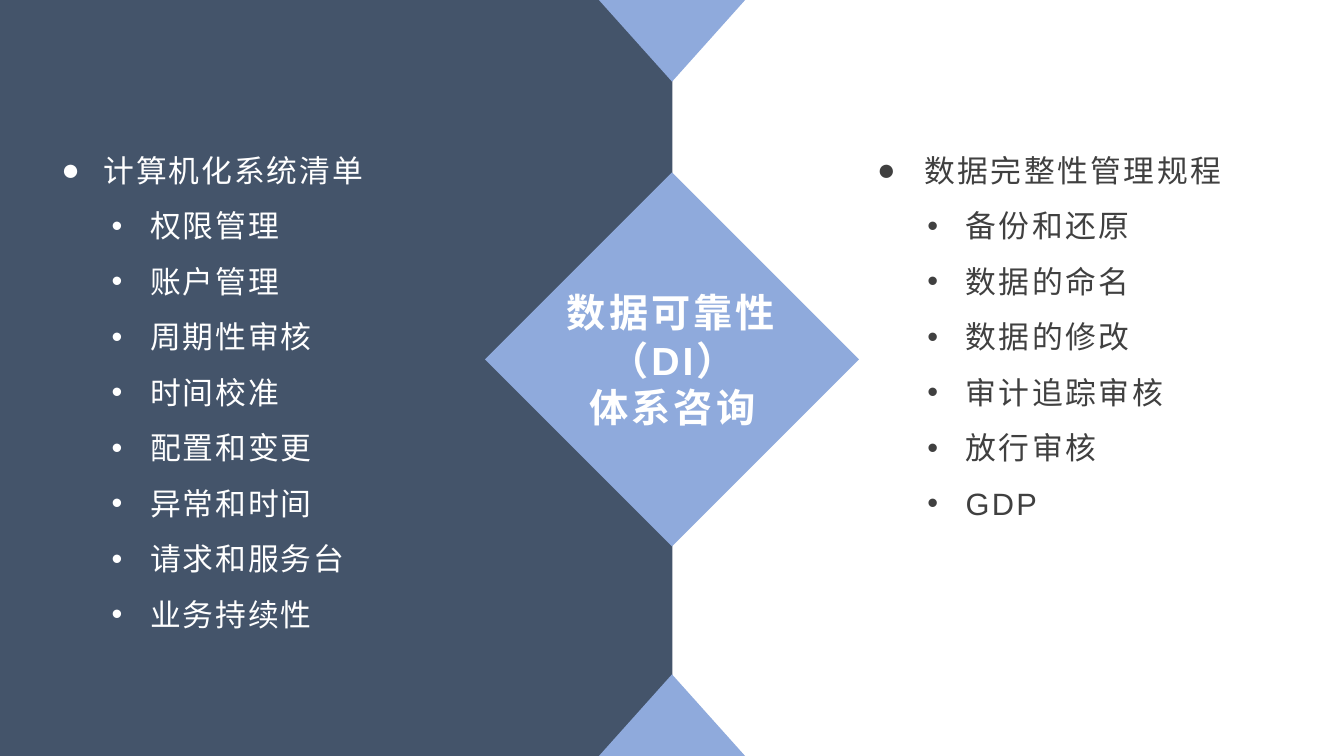
from dataclasses import dataclass

from lxml.etree import SubElement
from pptx import Presentation
from pptx.dml.color import RGBColor
from pptx.enum.shapes import MSO_SHAPE
from pptx.enum.text import MSO_ANCHOR, PP_ALIGN
from pptx.oxml.ns import qn
from pptx.slide import Slide
from pptx.text.text import TextFrame, _Paragraph
from pptx.util import Inches, Pt


@dataclass(frozen=True)
class Theme:
    font: str = "Arial"
    navy: str = "44546A"
    sky: str = "8FAADC"
    white: str = "FFFFFF"
    charcoal: str = "404040"
    title_size: int = 28
    list_size: int = 22
    title_tracking: float = 2.2
    latin_tracking: float = 1.6


@dataclass(frozen=True)
class Panel:
    shape: MSO_SHAPE
    left: float
    top: float
    width: float
    height: float
    color: str
    rotation: int = 0


@dataclass(frozen=True)
class Topic:
    left: float
    heading: str
    entries: tuple[str, ...]
    color: str
    tracking: float
    indent: float


THEME = Theme()
PANELS = (
    Panel(MSO_SHAPE.RECTANGLE, 0, 0, 6.67, 7.5, THEME.navy),
    Panel(MSO_SHAPE.ISOSCELES_TRIANGLE, 5.94, 0, 1.45, 0.81, THEME.sky, 180),
    Panel(MSO_SHAPE.DIAMOND, 4.81, 1.71, 3.71, 3.71, THEME.sky),
    Panel(MSO_SHAPE.ISOSCELES_TRIANGLE, 5.94, 6.69, 1.45, 0.81, THEME.sky),
)
TOPICS = (
    Topic(0.51, "计算机化系统清单",
          ("权限管理", "账户管理", "周期性审核", "时间校准", "配置和变更",
           "异常和时间", "请求和服务台", "业务持续性"),
          THEME.white, 1.4, 0.42),
    Topic(8.6, "数据完整性管理规程",
          ("备份和还原", "数据的命名", "数据的修改", "审计追踪审核", "放行审核", "GDP"),
          THEME.charcoal, 1.8, 0.47),
)


def draw_panel(slide: Slide, panel: Panel) -> None:
    """Draw one flat background shape."""
    area = slide.shapes.add_shape(
        panel.shape, Inches(panel.left), Inches(panel.top),
        Inches(panel.width), Inches(panel.height))
    area.rotation = panel.rotation
    area.shadow.inherit = False
    area.fill.solid()
    area.fill.fore_color.rgb = RGBColor.from_string(panel.color)
    area.line.fill.background()


def add_frame(slide: Slide, left: float, top: float, width: float, height: float,
              anchor: MSO_ANCHOR = MSO_ANCHOR.TOP) -> TextFrame:
    """Add a wrapping text box and return its frame."""
    frame = slide.shapes.add_textbox(
        Inches(left), Inches(top), Inches(width), Inches(height)).text_frame
    frame.word_wrap = True
    frame.vertical_anchor = anchor
    return frame


def set_bullet(paragraph: _Paragraph, bullet: str, margin: float, hanging: float) -> None:
    """Give a paragraph a hanging bullet."""
    properties = paragraph._p.get_or_add_pPr()
    properties.set("marL", str(Inches(margin)))
    properties.set("indent", str(-Inches(hanging)))
    SubElement(properties, qn("a:buFont"), typeface=THEME.font)
    SubElement(properties, qn("a:buChar"), char=bullet)


def write(frame: TextFrame, text: str, *, size: int, color: str, tracking: float,
          bold: bool = False, align: PP_ALIGN = PP_ALIGN.LEFT, bullet: str = "",
          level: int = 0, margin: float = 0, hanging: float = 0,
          line_spacing: float = 1.0, space_after: int = 0) -> None:
    """Append one formatted paragraph to a frame."""
    first = frame.paragraphs[0]
    paragraph = first if not first.runs else frame.add_paragraph()
    if bullet:
        set_bullet(paragraph, bullet, margin, hanging)
    paragraph.level = level
    paragraph.alignment = align
    paragraph.line_spacing = line_spacing
    paragraph.space_after = Pt(space_after)
    run = paragraph.add_run()
    run.text = text
    run.font.size = Pt(size)
    run.font.bold = bold
    run.font.name = THEME.font
    run.font.color.rgb = RGBColor.from_string(color)
    properties = run.font._element
    properties.set("spc", str(round(tracking * 100)))
    SubElement(properties, qn("a:ea"), typeface=THEME.font)


def draw_topic(slide: Slide, topic: Topic) -> None:
    """Write a topic heading and its nested entries."""
    frame = add_frame(slide, topic.left, 1.38, 4.22, 5.19)
    style = dict(size=THEME.list_size, color=topic.color, line_spacing=1.2, space_after=8)
    write(frame, topic.heading, bullet="●", margin=topic.indent, hanging=topic.indent,
          tracking=topic.tracking, **style)
    for entry in topic.entries:
        tracking = THEME.latin_tracking if entry.isascii() else topic.tracking
        write(frame, entry, bullet="•", level=1, margin=0.88, hanging=0.38,
              tracking=tracking, **style)


def main() -> None:
    """Build and save the slide."""
    presentation = Presentation()
    presentation.slide_width = Inches(13.33)
    presentation.slide_height = Inches(7.5)
    slide = presentation.slides.add_slide(presentation.slide_layouts[6])
    for panel in PANELS:
        draw_panel(slide, panel)
    title = add_frame(slide, 5.37, 2.24, 2.6, 2.65, MSO_ANCHOR.MIDDLE)
    for line in ("数据可靠性（DI）", "体系咨询"):
        write(title, line, size=THEME.title_size, color=THEME.white, bold=True,
              tracking=THEME.title_tracking, align=PP_ALIGN.CENTER)
    for topic in TOPICS:
        draw_topic(slide, topic)
    presentation.save("out.pptx")


if __name__ == "__main__":
    main()
